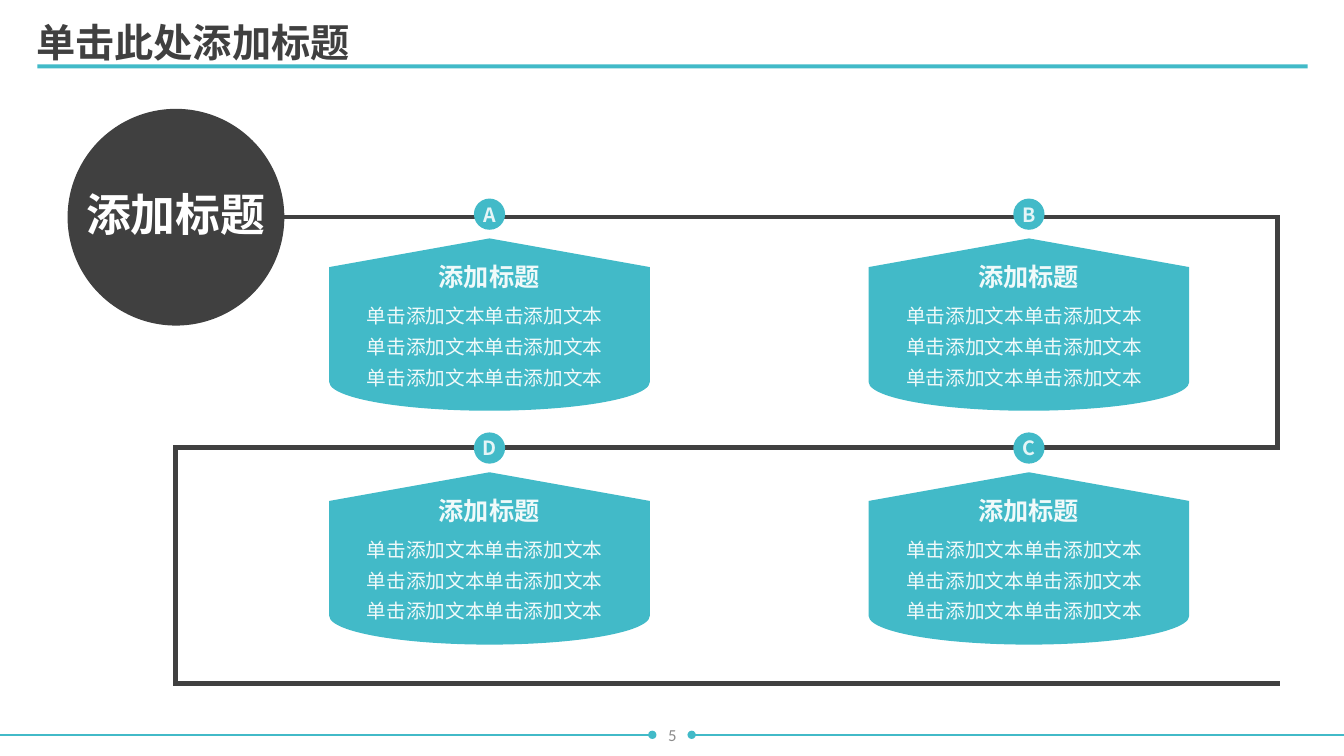
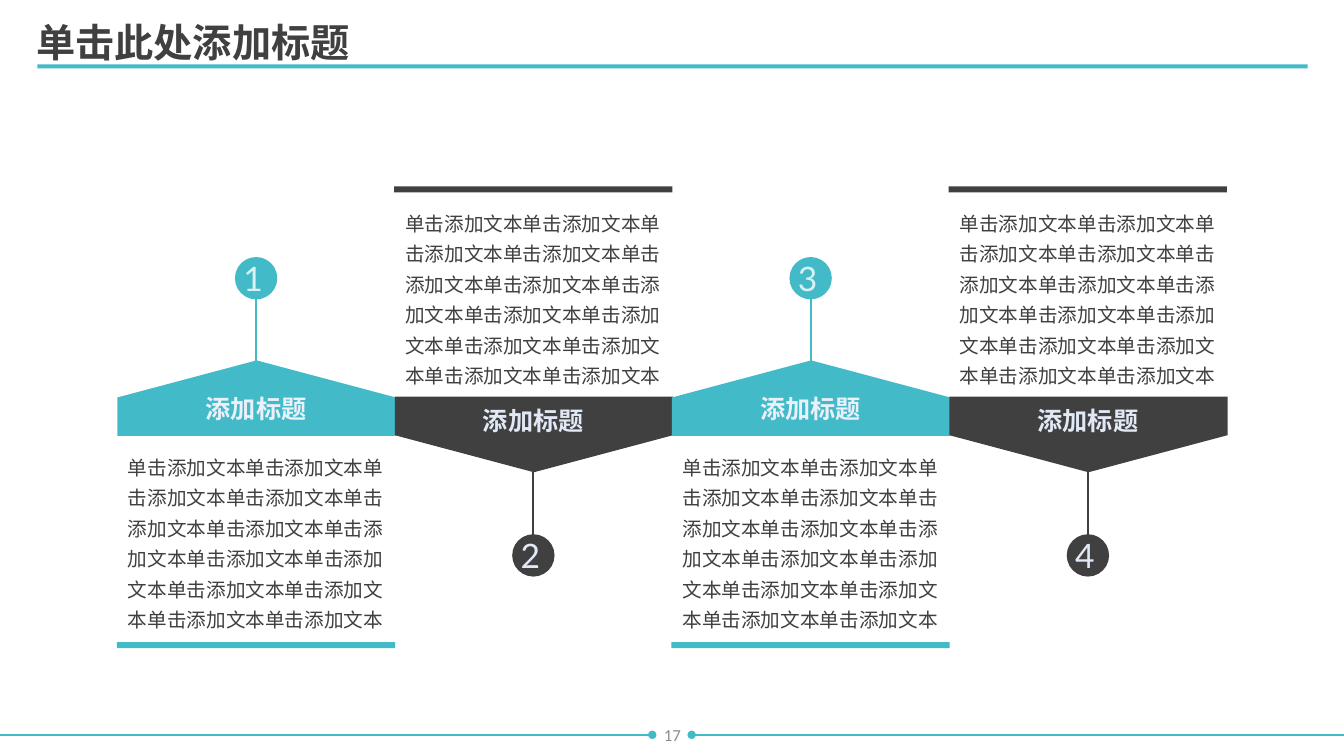
from lxml.etree import SubElement
from pptx import Presentation
from pptx.dml.color import RGBColor
from pptx.enum.shapes import MSO_CONNECTOR, MSO_SHAPE as SHAPE
from pptx.enum.text import MSO_ANCHOR as ANCHOR, MSO_AUTO_SIZE, PP_ALIGN as ALIGN
from pptx.oxml.ns import qn
from pptx.util import Pt

PX = 9144  # EMU, 100 px to the inch
TEAL, DARK, GREY, WHITE = "42BAC8", "404040", "8C8C8C", "FFFFFF"
CJK = "Noto Sans CJK SC"
HEADING, PHRASE = "添加标题", "单击添加文本"


def emu(*lengths):
    return [n * PX for n in lengths]


def rgb(hex_code):
    return RGBColor.from_string(hex_code)


class Deck:
    """Shared style, plus the slide being filled."""

    def __init__(self):
        self.prs = Presentation()
        self.prs.slide_width, self.prs.slide_height = emu(1333, 750)

    def slide(self, title, number):
        """Start a slide with its title, rule and footer."""
        self.s = self.prs.slides.add_slide(self.prs.slide_layouts[5])
        self.shape(SHAPE.RECTANGLE, 37, 64, 1260, 4, TEAL)
        for edge, end in ((0, 647), (1333, 686)):
            self.line(edge, 729, end, 729, TEAL, 1, tail="oval")
        self.text(517, 709, 300, 40, str(number), 12, GREY, font="Calibri",
                  align=ALIGN.CENTER, anchor=ANCHOR.MIDDLE)
        sp = self.s.shapes.title
        sp.left, sp.top, sp.width, sp.height = emu(26, 18, 756, 52)
        self.fill_text(sp.text_frame, title, 28, DARK, bold=True, spacing=0.9)

    def fill_text(self, tf, text, size, color, font=CJK, bold=False,
                  align=ALIGN.LEFT, anchor=ANCHOR.TOP, spacing=1.0, wrap=True):
        tf.text = text
        tf.word_wrap = wrap
        tf.auto_size = MSO_AUTO_SIZE.NONE
        tf.vertical_anchor = anchor
        p = tf.paragraphs[0]
        p.alignment, p.line_spacing = align, spacing
        r = p.runs[0]
        r.font.size, r.font.bold, r.font.name = Pt(size), bold, font
        r.font.color.rgb = rgb(color)
        SubElement(r.font._element, qn("a:ea"), typeface=font)

    def text(self, x, y, w, h, text, size, color, **style):
        box = self.s.shapes.add_textbox(*emu(x, y, w, h))
        self.fill_text(box.text_frame, text, size, color, **style)

    def heading(self, x, y, w, color):
        self.text(x, y, w, 37, HEADING, 18, color, bold=True, align=ALIGN.CENTER, spacing=0.9)

    def body(self, x, y, w, h, repeats, color):
        self.text(x, y, w, h, PHRASE * repeats, 14, color, spacing=1.3)

    def shape(self, kind, x, y, w, h, color, rotation=0):
        sp = self.s.shapes.add_shape(kind, *emu(x, y, w, h))
        sp.shadow.inherit = False
        sp.fill.solid()
        sp.fill.fore_color.rgb = rgb(color)
        sp.line.fill.background()
        sp.rotation = rotation
        return sp

    def upright(self, kind, cx, y, w, h, color, rotation):
        """Place a quarter-turned shape by its visible centre, top and size."""
        return self.shape(kind, cx - h // 2, y + (h - w) // 2, h, w, color, rotation)

    def circle(self, cx, y, size, color, label, label_size, label_color, nudge=0, **style):
        """Draw a labelled circle; nudge is a right inset that moves the label left."""
        sp = self.shape(SHAPE.OVAL, cx - size // 2, y, size, size, color)
        tf = sp.text_frame
        tf.margin_left = tf.margin_top = tf.margin_bottom = 0
        tf.margin_right = nudge * PX
        self.fill_text(tf, label, label_size, label_color, align=ALIGN.CENTER,
                       anchor=ANCHOR.MIDDLE, wrap=False, **style)

    def line(self, x1, y1, x2, y2, color, width, cap="flat", tail=None):
        c = self.s.shapes.add_connector(MSO_CONNECTOR.STRAIGHT, *emu(x1, y1, x2, y2))
        c.line.color.rgb = rgb(color)
        c.line.width = Pt(width)
        spPr = c._element.spPr
        ln = spPr.find(qn("a:ln"))
        ln.set("cap", cap)
        if tail:
            SubElement(ln, qn("a:tailEnd"), type=tail)
        SubElement(spPr, qn("a:effectLst"))


def winding_path(deck):
    deck.slide("单击此处添加标题", 5)
    left, right = 174, 1267
    corners = [(left, 215), (right, 215), (right, 444), (left, 444), (left, 678), (right, 678)]
    for start, end in zip(corners, corners[1:]):
        deck.line(*start, *end, DARK, 3, cap="sq")
    deck.circle(left, 108, 215, DARK, HEADING, 32, WHITE, bold=True, spacing=0.9)
    pale = "F0FAFA"
    for letter, col, row in (("A", 0, 0), ("B", 1, 0), ("C", 1, 1), ("D", 0, 1)):
        cx, y = 485 + 535 * col, 197 + 232 * row
        deck.upright(SHAPE.FLOWCHART_DISPLAY, cx, y + 40, 318, 171, TEAL, 90)
        deck.circle(cx, y, 31, TEAL, letter, 14, "E5F5F7", bold=True)
        deck.heading(cx - 131, y + 61, 262, pale)
        deck.body(cx - 131, y + 93, 262, 101, 6, pale)


def alternating_steps(deck):
    deck.slide("单击此处添加标题", 17)
    up = dict(color=TEAL, stem=(292, 376), circle=255, digit="D8F1F4", plate=358, turn=270,
              heading=389, label="EBF0F9", body=440, bar=637)
    down = dict(color=DARK, stem=(536, 452), circle=530, digit="E2E9F6", plate=394, turn=90,
                heading=401, label="E2E9F6", body=198, bar=185)
    for i, step in enumerate((up, down, up, down)):
        cx, color = 254 + 275 * i, step["color"]
        y1, y2 = step["stem"]
        deck.line(cx, y1, cx, y2, color, 1.5)
        deck.circle(cx, step["circle"], 42, color, str(i + 1), 24, step["digit"],
                    nudge=6, font="Lato")
        deck.shape(SHAPE.RECTANGLE, cx - 138, step["bar"], 276, 6, color)
        plate = deck.upright(SHAPE.PENTAGON, cx, step["plate"], 276, 75, color, step["turn"])
        plate.adjustments[0] = 0.49
        deck.heading(cx - 116, step["heading"], 232, step["label"])
        deck.body(cx - 137, step["body"], 274, 192, 13, DARK)


def main():
    deck = Deck()
    winding_path(deck)
    alternating_steps(deck)
    deck.prs.save("out.pptx")


if __name__ == "__main__":
    main()
